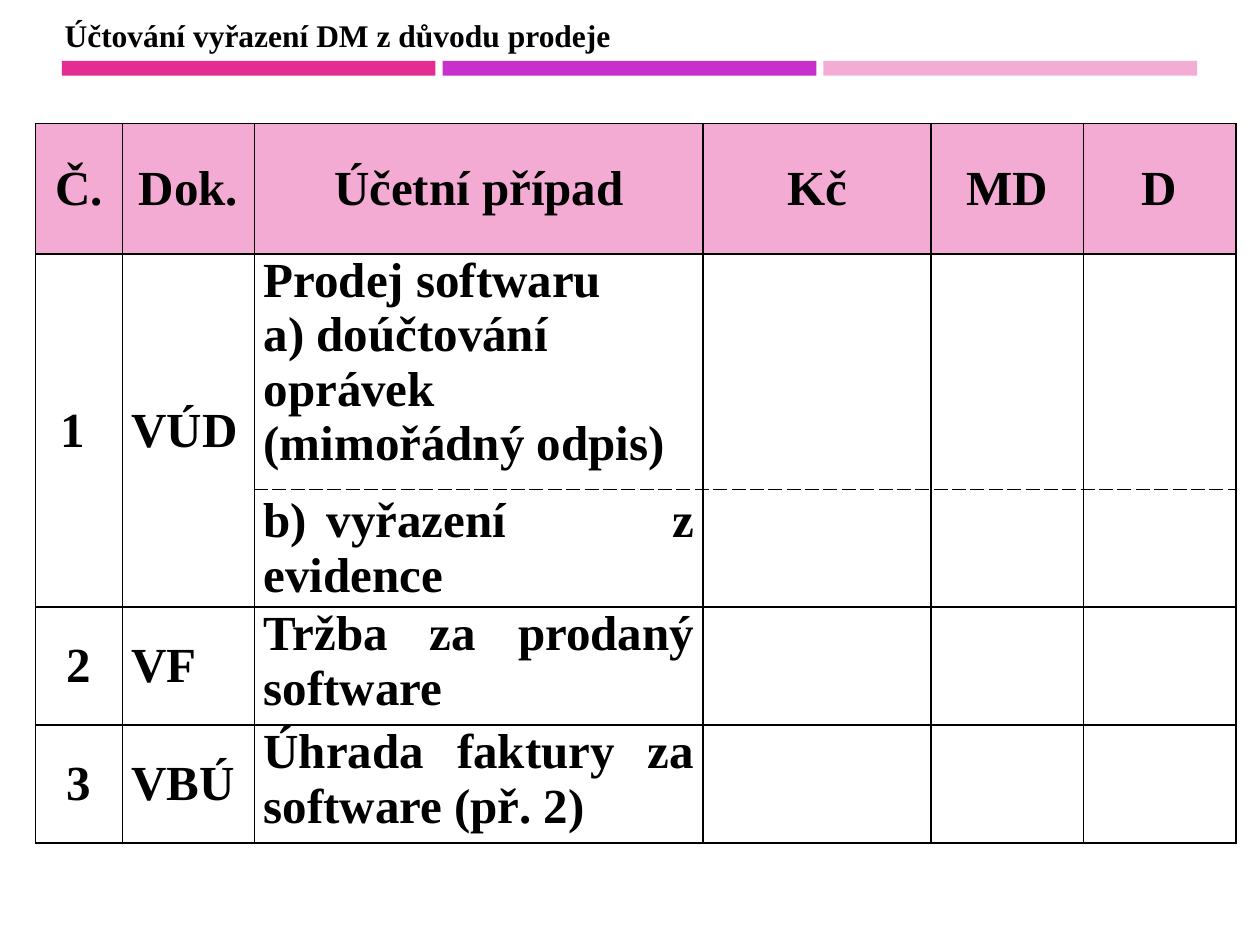
import dataclasses
import typing

import lxml.etree
import pptx
import pptx.dml.color
import pptx.enum.shapes
import pptx.enum.text
import pptx.oxml.ns
import pptx.util

Pt = pptx.util.Pt
qn = pptx.oxml.ns.qn
Align = pptx.enum.text.PP_ALIGN
Anchor = pptx.enum.text.MSO_ANCHOR


@dataclasses.dataclass(frozen=True)
class Theme:
    font: str = "Times New Roman"
    head: float = 18
    body: float = 28
    ink: str = "000000"
    pink: str = "F4ABD3"
    bars: tuple[str, ...] = ("E32D91", "C830CC", "F3ACD3")


@dataclasses.dataclass(frozen=True)
class Bar:
    left: float
    color: str


@dataclasses.dataclass(frozen=True)
class Entry:
    row: int
    col: int
    text: str
    align: typing.Any = Align.LEFT
    anchor: typing.Any = Anchor.MIDDLE
    tab: float = 0


THEME = Theme()
COLS = (49.7, 75.6, 256.3, 130.3, 87.1, 87.1)
ROWS = (74.5, 134.3, 67.4, 67.4, 67.4)
HEADS = ("Č.", "Dok.", "Účetní případ", "Kč", "MD", "D")
BARS = [Bar(35.3 + 217.6 * i, color) for i, color in enumerate(THEME.bars)]
MID, JUST, TOP = Align.CENTER, Align.JUSTIFY, Anchor.TOP
ITEMS = [Entry(0, i, text, MID) for i, text in enumerate(HEADS)] + [
    Entry(1, 0, "1\u00a0".replace("\u00a0", chr(160)), MID),
    Entry(1, 1, "VÚD"),
    Entry(1, 2, "Prodej softwaru\na) doúčtování oprávek (mimořádný odpis)", anchor=TOP),
    Entry(2, 2, "b)\tvyřazení z evidence", JUST, tab=36),
    Entry(3, 0, "2", MID),
    Entry(3, 1, "VF"),
    Entry(3, 2, "Tržba za prodaný software", JUST, TOP),
    Entry(4, 0, "3", MID),
    Entry(4, 1, "VBÚ"),
    Entry(4, 2, "Úhrada faktury za software (př. 2)", JUST, TOP),
]


def rgb(color: str) -> pptx.dml.color.RGBColor:
    return pptx.dml.color.RGBColor.from_string(color)


def write(frame, text: str, *, size: float, align=Align.LEFT, tab: float = 0) -> None:
    for i, line in enumerate(text.split("\n")):
        para = frame.add_paragraph() if i else frame.paragraphs[0]
        para.alignment = align
        run = para.add_run()
        run.text = line
        run.font.name = THEME.font
        run.font.size = Pt(size)
        run.font.bold = True
        run.font.color.rgb = rgb(THEME.ink)
        if tab:
            stops = lxml.etree.SubElement(para._p.get_or_add_pPr(), qn("a:tabLst"))
            lxml.etree.SubElement(stops, qn("a:tab"), pos=str(Pt(tab)), algn="l")


def edge(cell, side: str, dash: str) -> None:
    line = lxml.etree.SubElement(
        cell._tc.get_or_add_tcPr(), qn("a:ln" + side), w=str(Pt(1))
    )
    fill = lxml.etree.SubElement(line, qn("a:solidFill"))
    lxml.etree.SubElement(fill, qn("a:srgbClr"), val=THEME.ink)
    lxml.etree.SubElement(line, qn("a:prstDash"), val=dash)


def style(cell, row: int, col: int) -> None:
    for side in "LRTB":
        split = col > 1 and (row, side) in ((1, "B"), (2, "T"))
        edge(cell, side, "sysDash" if split else "solid")
    if row == 0:
        cell.fill.solid()
        cell.fill.fore_color.rgb = rgb(THEME.pink)
    else:
        cell.fill.background()
    cell.margin_left = cell.margin_right = Pt(5.2)
    cell.margin_top = cell.margin_bottom = Pt(0)


def draw_bar(slide, bar: Bar) -> None:
    shape = slide.shapes.add_shape(
        pptx.enum.shapes.MSO_SHAPE.RECTANGLE, Pt(bar.left), Pt(34.8), Pt(213.6), Pt(8.4)
    )
    shape.shadow.inherit = False
    shape.fill.solid()
    shape.fill.fore_color.rgb = rgb(bar.color)
    shape.line.fill.background()


def draw_title(slide) -> None:
    title = slide.shapes.title
    title.left, title.top, title.width, title.height = Pt(29.7), Pt(5.3), Pt(330), Pt(29)
    frame = title.text_frame
    frame.word_wrap = False
    frame.auto_size = pptx.enum.text.MSO_AUTO_SIZE.SHAPE_TO_FIT_TEXT
    frame.vertical_anchor = TOP
    write(frame, "Účtování vyřazení DM z důvodu prodeje", size=THEME.head)


def draw_table(slide) -> None:
    grid = slide.shapes.add_table(
        len(ROWS), len(COLS), Pt(20.2), Pt(70.6), Pt(sum(COLS)), Pt(sum(ROWS))
    ).table
    grid.first_row = grid.horz_banding = False
    for col, width in zip(grid.columns, COLS):
        col.width = Pt(width)
    for row, height in zip(grid.rows, ROWS):
        row.height = Pt(height)
    for row in range(len(ROWS)):
        for col in range(len(COLS)):
            style(grid.cell(row, col), row, col)
    for col in range(2):
        grid.cell(1, col).merge(grid.cell(2, col))
    for item in ITEMS:
        cell = grid.cell(item.row, item.col)
        cell.vertical_anchor = item.anchor
        write(cell.text_frame, item.text, size=THEME.body, align=item.align, tab=item.tab)


def main() -> None:
    deck = pptx.Presentation()
    deck.slide_width, deck.slide_height = Pt(720), Pt(540)
    slide = deck.slides.add_slide(deck.slide_layouts[5])
    for bar in BARS:
        draw_bar(slide, bar)
    draw_title(slide)
    draw_table(slide)
    deck.save("out.pptx")


if __name__ == "__main__":
    main()
